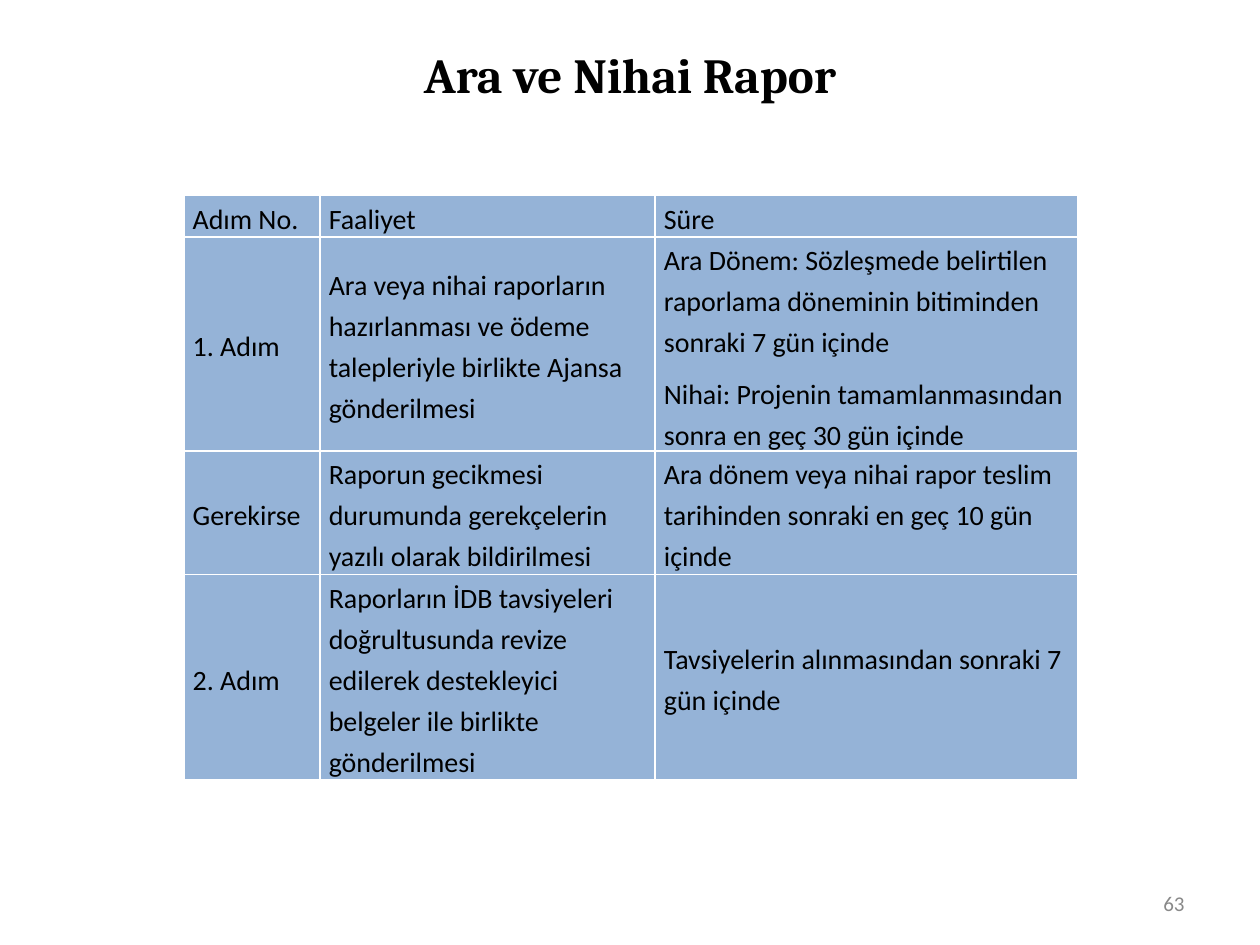
from lxml import etree
from pptx import Presentation
from pptx.dml.color import RGBColor
from pptx.enum import text
from pptx.oxml import ns
from pptx.util import Inches, Pt

BLACK = RGBColor(0x00, 0x00, 0x00)
GRAY = RGBColor(0x89, 0x89, 0x89)
BLUE = RGBColor(0x95, 0xB3, 0xD7)
WHITE = RGBColor(0xFF, 0xFF, 0xFF)

TITLE = "Ara ve Nihai Rapor"
PAGE = "63"
ROWS = [
    ("Adım No.", "Faaliyet", "Süre"),
    ("1. Adım",
     "Ara veya nihai raporların hazırlanması ve ödeme talepleriyle birlikte Ajansa gönderilmesi",
     "Ara Dönem: Sözleşmede belirtilen raporlama döneminin bitiminden sonraki 7 gün içinde\n"
     "Nihai: Projenin tamamlanmasından sonra en geç 30 gün içinde"),
    ("Gerekirse",
     "Raporun gecikmesi durumunda gerekçelerin yazılı olarak bildirilmesi",
     "Ara dönem veya nihai rapor teslim tarihinden sonraki en geç 10 gün içinde"),
    ("2. Adım",
     "Raporların İDB tavsiyeleri doğrultusunda revize edilerek destekleyici belgeler ile birlikte gönderilmesi",
     "Tavsiyelerin alınmasından sonraki 7 gün içinde"),
]
COL_WIDTHS = [1.08, 2.66, 3.35]
ROW_HEIGHTS = [0.33, 1.7, 0.98, 1.63]


def style(p, font, size, color, bold=False):
    for r in p.runs:
        r.font.name = font
        r.font.size = Pt(size)
        r.font.color.rgb = color
        r.font.bold = bold


def add_text(s, box, words, align, anchor, *font):
    tf = s.shapes.add_textbox(*map(Inches, box)).text_frame
    tf.word_wrap = True
    tf.vertical_anchor = anchor
    tf.text = words
    p = tf.paragraphs[0]
    p.alignment = align
    style(p, *font)


def add_borders(cell):
    tcPr = cell._tc.get_or_add_tcPr()
    for i, side in enumerate(("lnL", "lnR", "lnT", "lnB")):
        ln = etree.Element(ns.qn("a:" + side), w=str(Pt(1)))
        fill = etree.SubElement(ln, ns.qn("a:solidFill"))
        etree.SubElement(fill, ns.qn("a:srgbClr"), val=str(WHITE))
        tcPr.insert(i, ln)


def fill_cell(cell, words):
    cell.text = words
    cell.vertical_anchor = text.MSO_ANCHOR.MIDDLE
    cell.margin_left = cell.margin_right = Inches(0.07)
    cell.margin_top = cell.margin_bottom = 0
    cell.fill.solid()
    cell.fill.fore_color.rgb = BLUE
    add_borders(cell)
    for i, p in enumerate(cell.text_frame.paragraphs):
        p.line_spacing = 1.2
        p.space_before = Pt(3 if i else 0)
        p.space_after = Pt(3)
        style(p, "Calibri", 16, BLACK)


def main():
    prs = Presentation()
    prs.slide_width, prs.slide_height = Inches(10), Inches(7.5)
    s = prs.slides.add_slide(prs.slide_layouts[6])
    add_text(s, (7.17, 6.97, 2.33, 0.4), PAGE, text.PP_ALIGN.RIGHT,
             text.MSO_ANCHOR.MIDDLE, "Calibri", 12, GRAY)
    add_text(s, (0.5, 0.3, 9, 1.25), TITLE, text.PP_ALIGN.CENTER,
             text.MSO_ANCHOR.TOP, "Cambria", 28, BLACK, True)

    table = s.shapes.add_table(
        len(ROWS), len(COL_WIDTHS), Inches(1.46), Inches(1.55),
        Inches(sum(COL_WIDTHS)), Inches(sum(ROW_HEIGHTS))).table
    table.first_row = table.horz_banding = False
    for col, width in zip(table.columns, COL_WIDTHS):
        col.width = Inches(width)
    for row, height, words in zip(table.rows, ROW_HEIGHTS, ROWS):
        row.height = Inches(height)
        for cell, content in zip(row.cells, words):
            fill_cell(cell, content)

    prs.save("out.pptx")


if __name__ == "__main__":
    main()
